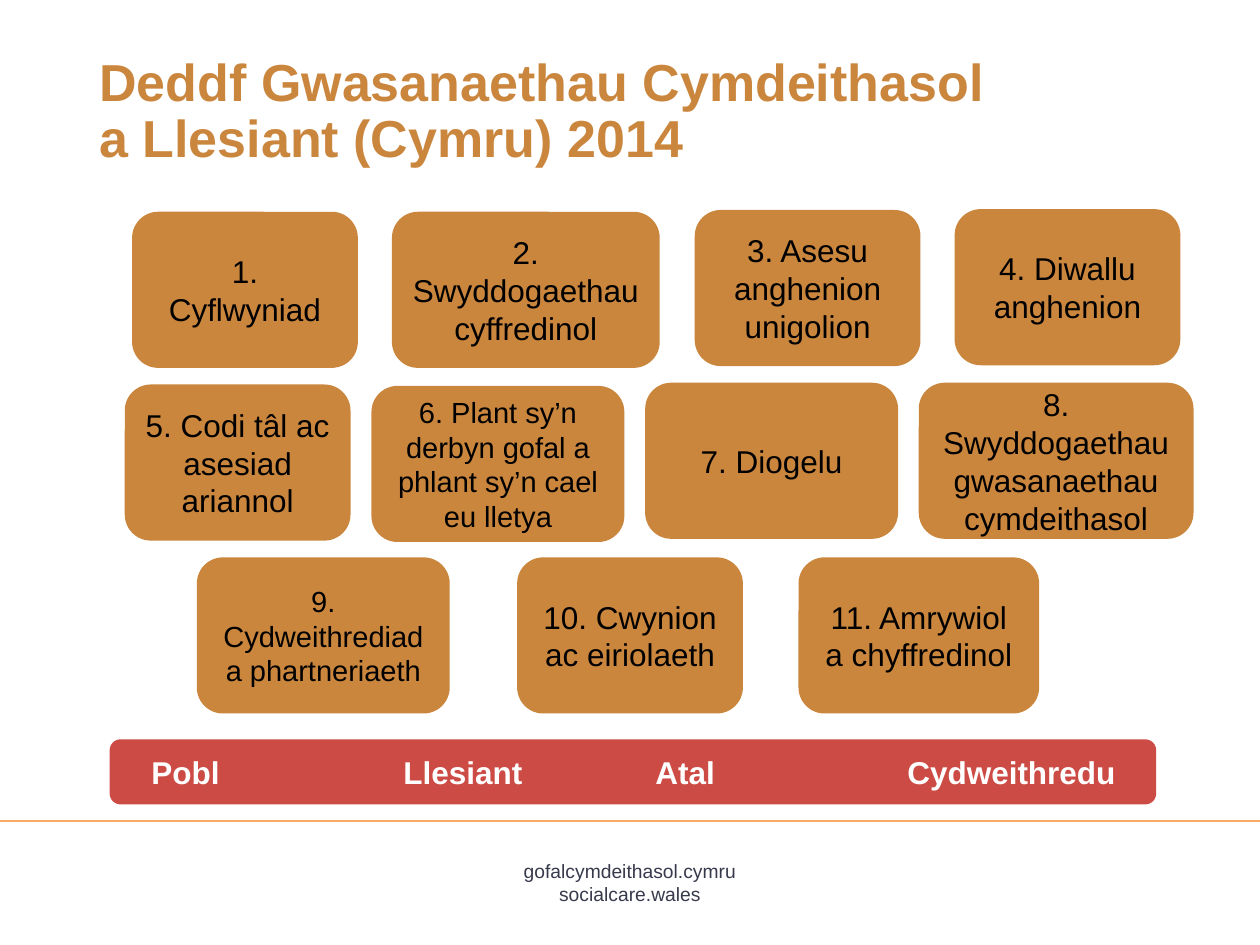
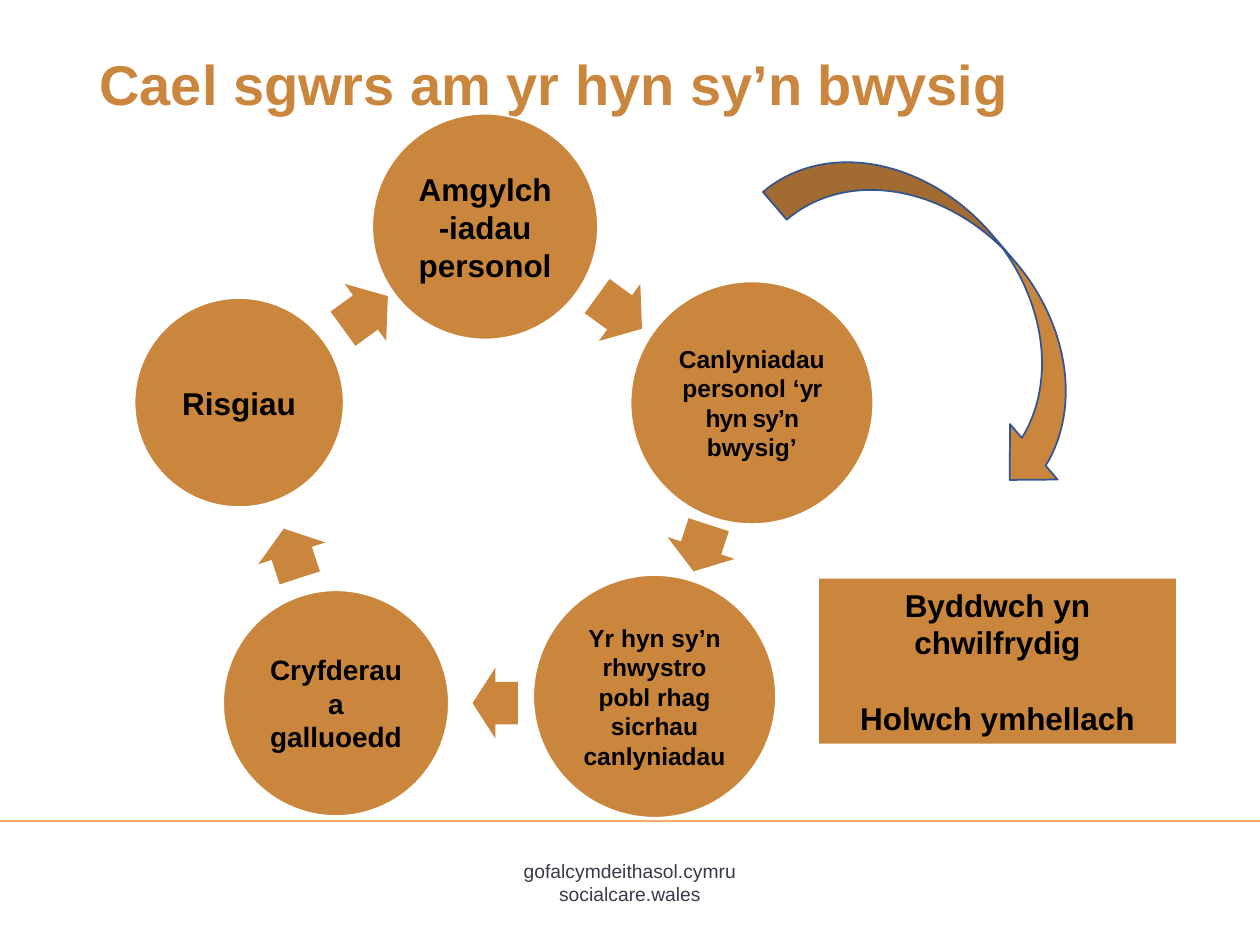
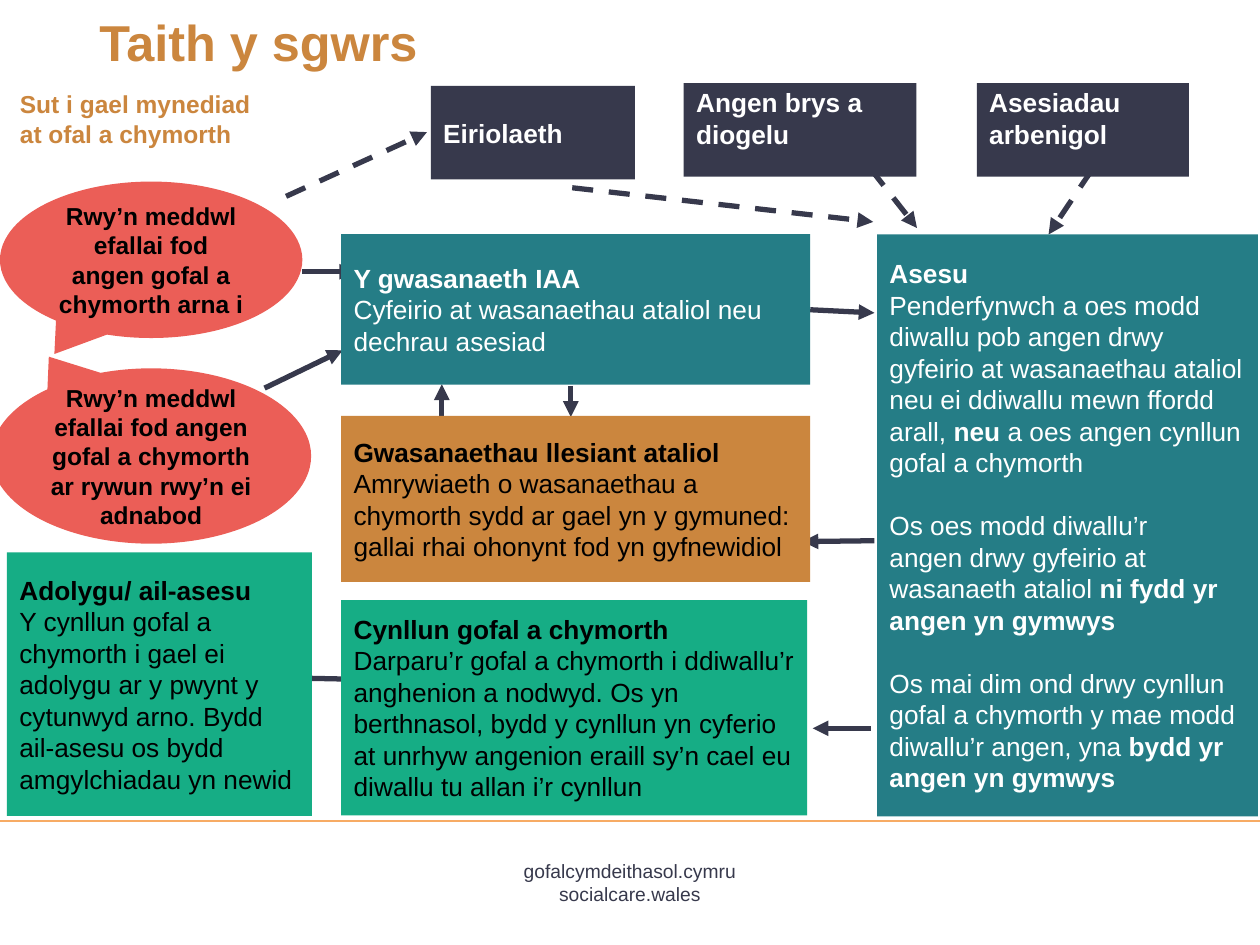
from lxml import etree
from pptx import Presentation
from pptx.dml.color import RGBColor
from pptx.enum import dml, shapes, text
from pptx.oxml.ns import qn
from pptx.util import Pt

rgb = RGBColor.from_string
KIND = shapes.MSO_SHAPE
TOP, MIDDLE = text.MSO_ANCHOR.TOP, text.MSO_ANCHOR.MIDDLE
LEFT, CENTER = text.PP_ALIGN.LEFT, text.PP_ALIGN.CENTER
OCHRE, RED, CORAL = "CB863E", "CC4B44", "EB5E57"
NAVY, TEAL, GREEN, RULE = "37394C", "257D86", "16AD85", "F7AB64"
BLACK, WHITE = "000000", "FFFFFF"


def box(s, kind, at, fill=None, paras=(), size=18, color=BLACK, bold=False,
        align=CENTER, anchor=MIDDLE, border=None):
    at = [Pt(v) for v in at]
    if kind is None:
        sp = s.shapes.add_textbox(*at)
    else:
        sp = s.shapes.add_shape(kind, *at)
        sp.shadow.inherit = False
        sp.fill.solid()
        sp.fill.fore_color.rgb = rgb(fill)
        if border:
            sp.line.color.rgb = rgb(border)
            sp.line.width = Pt(1)
        else:
            sp.line.fill.background()
    tf = sp.text_frame
    tf.word_wrap = True
    tf.vertical_anchor = anchor
    for i, runs in enumerate(paras):
        p = tf.add_paragraph() if i else tf.paragraphs[0]
        p.alignment = align
        p.font.name = "Arial"
        p.font.size = Pt(size)
        p.font.color.rgb = rgb(color)
        if isinstance(runs, str):
            runs = [(runs, bold)]
        for words, strong in runs:
            r = p.add_run()
            r.text = words
            r.font.bold = strong
    return sp


def line(s, x1, y1, x2, y2, color=NAVY, width=3, dashed=False, arrow=True):
    c = s.shapes.add_connector(shapes.MSO_CONNECTOR.STRAIGHT,
                               Pt(x1), Pt(y1), Pt(x2), Pt(y2))
    c.line.color.rgb = rgb(color)
    c.line.width = Pt(width)
    if dashed:
        c.line.dash_style = dml.MSO_LINE.DASH
    if arrow:
        etree.SubElement(c.line._get_or_add_ln(), qn("a:tailEnd"), type="triangle")
    etree.SubElement(c._element.spPr, qn("a:effectLst"))


prs = Presentation()
prs.slide_width, prs.slide_height = Pt(720), Pt(540)

titles = [
    ("Deddf Gwasanaethau Cymdeithasol a Llesiant (Cymru) 2014", 29, 533, 81, 29.7),
    ("Cael sgwrs am yr hyn sy’n bwysig", 29, 567, 81, 32),
    ("Taith y sgwrs", 6.5, 398, 42.5, 28.8),
]
slides = []
for title, y, w, h, size in titles:
    s = prs.slides.add_slide(prs.slide_layouts[6])
    box(s, None, (278.5, 487.5, 163, 33), paras=["gofalcymdeithasol.cymru", "socialcare.wales"],
        size=11, color=NAVY, anchor=TOP)
    line(s, 0, 469.3, 720, 469.3, RULE, 1, arrow=False)
    sp = box(s, None, (49.7, y, w, h), paras=[title], size=size, color=OCHRE,
             bold=True, align=LEFT, anchor=TOP)
    sp.text_frame.paragraphs[0].line_spacing = 0.9
    slides.append(s)
act, talk, journey = slides

parts = [
    (75.5, 121, 129, 18, ["1. Cyflwyniad"]),
    (224, 121, 153, 18, ["2. Swyddogaethau cyffredinol"]),
    (397, 120, 129, 18, ["3. Asesu anghenion unigolion"]),
    (545.5, 119.5, 129, 18, ["4. Diwallu anghenion"]),
    (71.3, 219.7, 129, 18, ["5. Codi tâl ac asesiad ariannol"]),
    (212.3, 220.5, 144.5, 16.6, ["6. Plant sy’n derbyn gofal a phlant sy’n cael eu lletya"]),
    (368.7, 218.7, 144.5, 18, ["7. Diogelu"]),
    (525, 218.7, 157, 18, ["8. Swyddogaethau gwasanaethau cymdeithasol"]),
    (112.5, 318.5, 144.5, 16.6, ["9.", "Cydweithrediad a phartneriaeth"]),
    (295.5, 318.5, 129, 18, ["10. Cwynion ac eiriolaeth"]),
    (456.3, 318.5, 137.5, 18, ["11. Amrywiol a chyffredinol"]),
]
for x, y, w, size, paras in parts:
    box(act, KIND.ROUNDED_RECTANGLE, (x, y, w, 89.2), OCHRE, paras, size)

sp = box(act, KIND.ROUNDED_RECTANGLE, (62.7, 422.5, 598, 37.2), RED)
tf = sp.text_frame
tf.margin_left = Pt(22)
p = tf.paragraphs[0]
p.alignment = LEFT
tabs = etree.SubElement(p._p.get_or_add_pPr(), qn("a:tabLst"))
for i in range(1, 4):
    etree.SubElement(tabs, qn("a:tab"), pos=str(Pt(144 * i)), algn="l")
p.font.name, p.font.size, p.font.bold = "Arial", Pt(18), True
p.font.color.rgb = rgb(WHITE)
p.add_run().text = "Pobl\tLlesiant\tAtal\tCydweithredu"

circles = [
    (212.7, 65, 129, 18, "Amgylch-iadau personol"),
    (360.3, 160.8, 138.7, 14, [("Canlyniadau personol ‘", True), ("yr hyn sy’n ", True),
                               ("bwysig’", True)]),
    (304.7, 328.6, 138.7, 14, "Yr hyn sy’n rhwystro pobl rhag sicrhau canlyniadau"),
    (127.5, 337.3, 129, 16, "Cryfderau a galluoedd"),
    (76.9, 170.3, 119.5, 18, "Risgiau"),
]
arrows = [(338.2, 158.4, 31.7), (386.6, 293, 28), (270, 381.6, 26),
          (152, 296, 29.5), (193, 158.4, 31.7)]
for i, ((x, y, d, size, words), (ax, ay, aw)) in enumerate(zip(circles, arrows)):
    sp = box(talk, KIND.OVAL, (x, y, d, d), OCHRE, [words], size, bold=True, border=WHITE)
    if i == 1:
        sp.text_frame.paragraphs[0].runs[1]._r.get_or_add_rPr().set("spc", "-50")
    sp = box(talk, KIND.RIGHT_ARROW, (ax, ay, aw, 40.3), OCHRE)
    sp.adjustments[0] = 0.6
    sp.rotation = 36 + 72 * i

sp = box(talk, KIND.CURVED_DOWN_ARROW, (426.2, 131, 237.6, 83.5), OCHRE, border="325491")
sp.rotation = 49.4
sp = box(talk, KIND.RECTANGLE, (468, 330.6, 204, 94.4), OCHRE,
         ["Byddwch yn chwilfrydig", "Holwch ymhellach"], bold=True)
sp.text_frame.paragraphs[1].space_before = Pt(21.5)

box(journey, None, (4.3, 47.5, 150, 44.6), paras=["Sut i gael mynediad at ofal a chymorth"],
    size=14, color=OCHRE, bold=True, align=LEFT, anchor=TOP)

for ends in [(163.5, 112.2, 244, 75.5), (327, 107.3, 499, 126.8),
             (497.5, 96.5, 524, 130.3), (624, 97, 599.2, 134)]:
    line(journey, *ends, dashed=True)
for ends in [(172.8, 155.3, 203, 155.3), (151.2, 221.8, 195.8, 200.2), (326.2, 220.5, 326.2, 238.3),
             (463, 177, 499.7, 178.8), (499.7, 309, 458.6, 309.5), (252.5, 238.3, 252.5, 219.6),
             (497.5, 416.2, 464.4, 416.2), (195, 388, 165.6, 387.4)]:
    line(journey, *ends)

callouts = [
    ((0, 103.8, 172.8, 89.4), 0.602, "Rwy’n meddwl efallai fod angen gofal a chymorth arna i"),
    ((-5, 210.5, 182.8, 100.2), -0.567,
     "Rwy’n meddwl efallai fod angen gofal a chymorth ar rywun rwy’n ei adnabod"),
]
for at, tip, words in callouts:
    sp = box(journey, KIND.OVAL_CALLOUT, at, CORAL, [words], 14, bold=True)
    sp.adjustments[0], sp.adjustments[1] = -0.32, tip

for x, y, w, words, anchor in [(246.2, 49, 116.6, "Eiriolaeth", MIDDLE),
                               (390.7, 47.5, 133, "Angen brys a diogelu", TOP),
                               (558.2, 47.5, 121.2, "Asesiadau arbenigol", TOP)]:
    sp = box(journey, KIND.RECTANGLE, (x, y, w, 53.5), NAVY, [words], 15, WHITE, True,
             LEFT, anchor)
    sp.text_frame.margin_top = Pt(2 if anchor == TOP else 3.6)

stages = [
    ((195, 133.8, 268, 86), TEAL, WHITE, "Y gwasanaeth IAA",
     ["Cyfeirio at wasanaethau ataliol neu dechrau asesiad"]),
    ((195, 237.6, 268, 95), OCHRE, BLACK, "Gwasanaethau llesiant ataliol",
     ["Amrywiaeth o wasanaethau a chymorth sydd ar gael yn y gymuned: "
      "gallai rhai ohonynt fod yn gyfnewidiol"]),
    ((195, 342.9, 266.2, 123), GREEN, BLACK, "Cynllun gofal a chymorth",
     ["Darparu’r gofal a chymorth i ddiwallu’r anghenion a nodwyd. Os yn berthnasol, bydd y "
      "cynllun yn cyferio at unrhyw angenion eraill sy’n cael eu diwallu tu allan i’r cynllun"]),
    ((4, 315.7, 174.3, 150.5), GREEN, BLACK, "Adolygu/ ail-asesu",
     ["Y cynllun gofal a chymorth i gael ei adolygu ar y pwynt y cytunwyd arno. "
      "Bydd ail-asesu os bydd amgylchiadau yn newid"]),
    ((501.2, 134, 217.7, 332.5), TEAL, WHITE, "Asesu",
     [[("Penderfynwch a oes modd diwallu pob angen drwy gyfeirio at wasanaethau ataliol "
        "neu ei ddiwallu mewn ffordd arall, ", False), ("neu", True),
       (" a oes angen cynllun gofal a chymorth", False)],
      "Os oes modd diwallu’r",
      [("angen drwy gyfeirio at wasanaeth ataliol ", False),
       ("ni fydd yr angen yn gymwys", True)],
      [("Os mai dim ond drwy cynllun gofal a chymorth y mae modd diwallu’r angen, yna ", False),
       ("bydd yr angen yn gymwys", True)]]),
]
for at, fill, color, heading, body in stages:
    sp = box(journey, KIND.RECTANGLE, at, fill, [[(heading, True)], *body], 15, color, align=LEFT)
for i in (2, 4):
    sp.text_frame.paragraphs[i].space_before = Pt(18)

prs.save("out.pptx")
